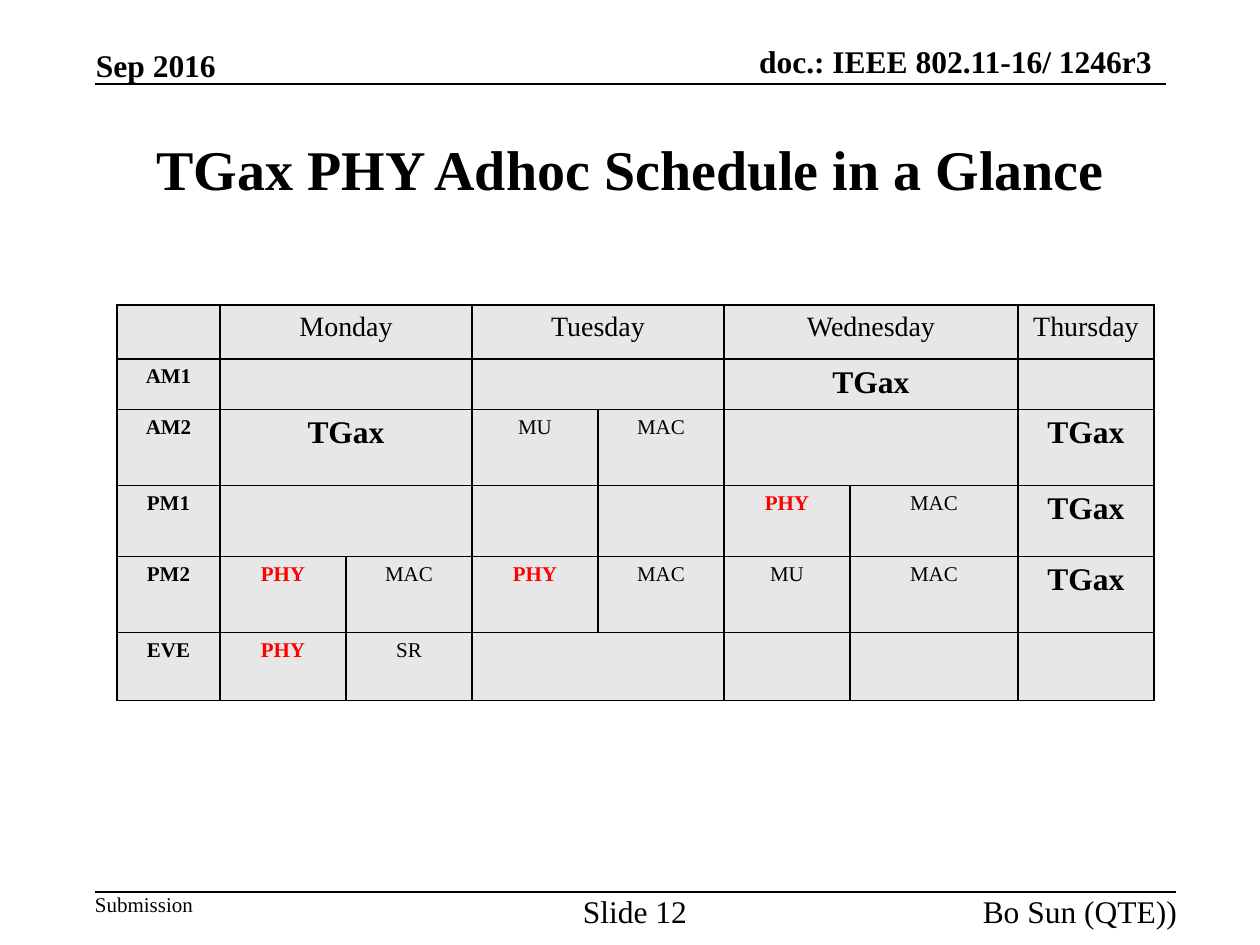
from lxml.etree import SubElement
from pptx import Presentation
from pptx.dml.color import RGBColor
from pptx.enum.shapes import MSO_CONNECTOR as Connector
from pptx.enum.text import MSO_ANCHOR as Anchor, MSO_AUTO_SIZE as AutoSize, PP_ALIGN as Align
from pptx.oxml import parse_xml
from pptx.oxml.ns import qn
from pptx.util import Emu, Pt

PX_PER_INCH = 126
FONT = "Times New Roman"
BLACK, RED, GREY = "000000", "FF0000", "E7E7E7"
DRAWING_NS = "http://schemas.openxmlformats.org/drawingml/2006/main"

COLUMNS = [103, 126, 126, 126, 126, 126, 168, 136]
ROWS = [54, 50, 76, 71, 76, 68]
# Each entry is (text, columns covered)
SCHEDULE = [
    [("", 1), ("Monday", 2), ("Tuesday", 2), ("Wednesday", 2), ("Thursday", 1)],
    [("AM1", 1), ("", 2), ("", 2), ("TGax", 2), ("", 1)],
    [("AM2", 1), ("TGax", 2), ("MU", 1), ("MAC", 1), ("", 2), ("TGax", 1)],
    [("PM1", 1), ("", 2), ("", 1), ("", 1), ("PHY", 1), ("MAC", 1), ("TGax", 1)],
    [("PM2", 1), ("PHY", 1), ("MAC", 1), ("PHY", 1), ("MAC", 1), ("MU", 1),
     ("MAC", 1), ("TGax", 1)],
    [("EVE", 1), ("PHY", 1), ("SR", 1), ("", 2), ("", 1), ("", 1), ("", 1)],
]


def px(length):
    return Emu(round(length * 914400 / PX_PER_INCH))


def color(value):
    return RGBColor.from_string(value)


def style(para, size, bold=False, ink=BLACK, align=Align.LEFT):
    para.alignment = align
    para.font.name = FONT
    para.font.size = Pt(size)
    para.font.bold = bold
    para.font.color.rgb = color(ink)


def add_label(page, box, text, size, bold=False, align=Align.LEFT, anchor=Anchor.TOP):
    """Unwrapped one-line text without margins."""
    frame = page.shapes.add_textbox(*map(px, box)).text_frame
    frame.word_wrap = False
    frame.auto_size = AutoSize.SHAPE_TO_FIT_TEXT
    frame.vertical_anchor = anchor
    frame.margin_left = frame.margin_right = frame.margin_top = frame.margin_bottom = 0
    para = frame.paragraphs[0]
    para.text = text
    style(para, size, bold, align=align)


def add_rule(page, left, top, width):
    rule = page.shapes.add_connector(
        Connector.STRAIGHT, px(left), px(top), px(left + width), px(top))
    rule.line.color.rgb = color(BLACK)
    rule.line.width = Pt(1)
    SubElement(rule._element.spPr, qn("a:effectLst"))


def add_header(page, left, top, width, height):
    add_label(page, (left + 1, top + 4, 123, 38), "Sep 2016", 18, True, anchor=Anchor.BOTTOM)
    add_label(page, (left + width - 490, top, 476, 38), "doc.: IEEE 802.11-16/ 1246r3",
              18, True, Align.RIGHT, Anchor.BOTTOM)
    add_rule(page, left, top + height, width)


def add_title(page, left, top, width, height):
    frame = page.shapes.add_textbox(*map(px, (left, top, width, height))).text_frame
    frame.word_wrap = True
    frame.vertical_anchor = Anchor.MIDDLE
    para = frame.paragraphs[0]
    para.text = "TGax PHY Adhoc Schedule in a Glance"
    style(para, 32, True, align=Align.CENTER)


def cell_style(row, column, text):
    """Size, weight and ink follow from the kind of entry."""
    if row == 0:
        return 16, False, BLACK
    if text == "TGax":
        return 18, True, BLACK
    if text == "PHY":
        return 12, True, RED
    return 12, column == 0, BLACK


def add_borders(cell):
    properties = cell._tc.get_or_add_tcPr()
    for index, side in enumerate(("lnL", "lnR", "lnT", "lnB")):
        properties.insert(index, parse_xml(
            f'<a:{side} xmlns:a="{DRAWING_NS}" w="{Pt(1)}"><a:solidFill>'
            f'<a:srgbClr val="{BLACK}"/></a:solidFill></a:{side}>'))


def add_schedule(page, left, top):
    box = (left, top, sum(COLUMNS), sum(ROWS))
    table = page.shapes.add_table(len(ROWS), len(COLUMNS), *map(px, box)).table
    for column, width in zip(table.columns, COLUMNS):
        column.width = px(width)
    for row, height in zip(table.rows, ROWS):
        row.height = px(height)
    for cell in table.iter_cells():
        cell.fill.solid()
        cell.fill.fore_color.rgb = color(GREY)
        add_borders(cell)
    for row, entries in enumerate(SCHEDULE):
        column = 0
        for text, covered in entries:
            cell = table.cell(row, column)
            if covered > 1:
                cell.merge(table.cell(row, column + covered - 1))
            para = cell.text_frame.paragraphs[0]
            if text:
                para.text = text
            style(para, *cell_style(row, column, text), align=Align.CENTER)
            column += covered


def add_footer(page, left, top, width):
    add_rule(page, left, top, width)
    add_label(page, (left, top, 110, 25), "Submission", 12)
    add_label(page, (left + 470, top, 140, 36), "Slide 12", 18, align=Align.CENTER)
    add_label(page, (left + width - 239, top, 240, 36), "Bo Sun (QTE))", 18, align=Align.RIGHT)


def main():
    deck = Presentation()
    deck.slide_width, deck.slide_height = px(1260), px(945)
    page = deck.slides.add_slide(deck.slide_layouts[6])
    add_header(page, 95, 42, 1071, 42)
    add_title(page, 95, 95, 1071, 147)
    add_schedule(page, 117, 305)
    add_footer(page, 95, 892, 1081)
    deck.save("out.pptx")


if __name__ == "__main__":
    main()
